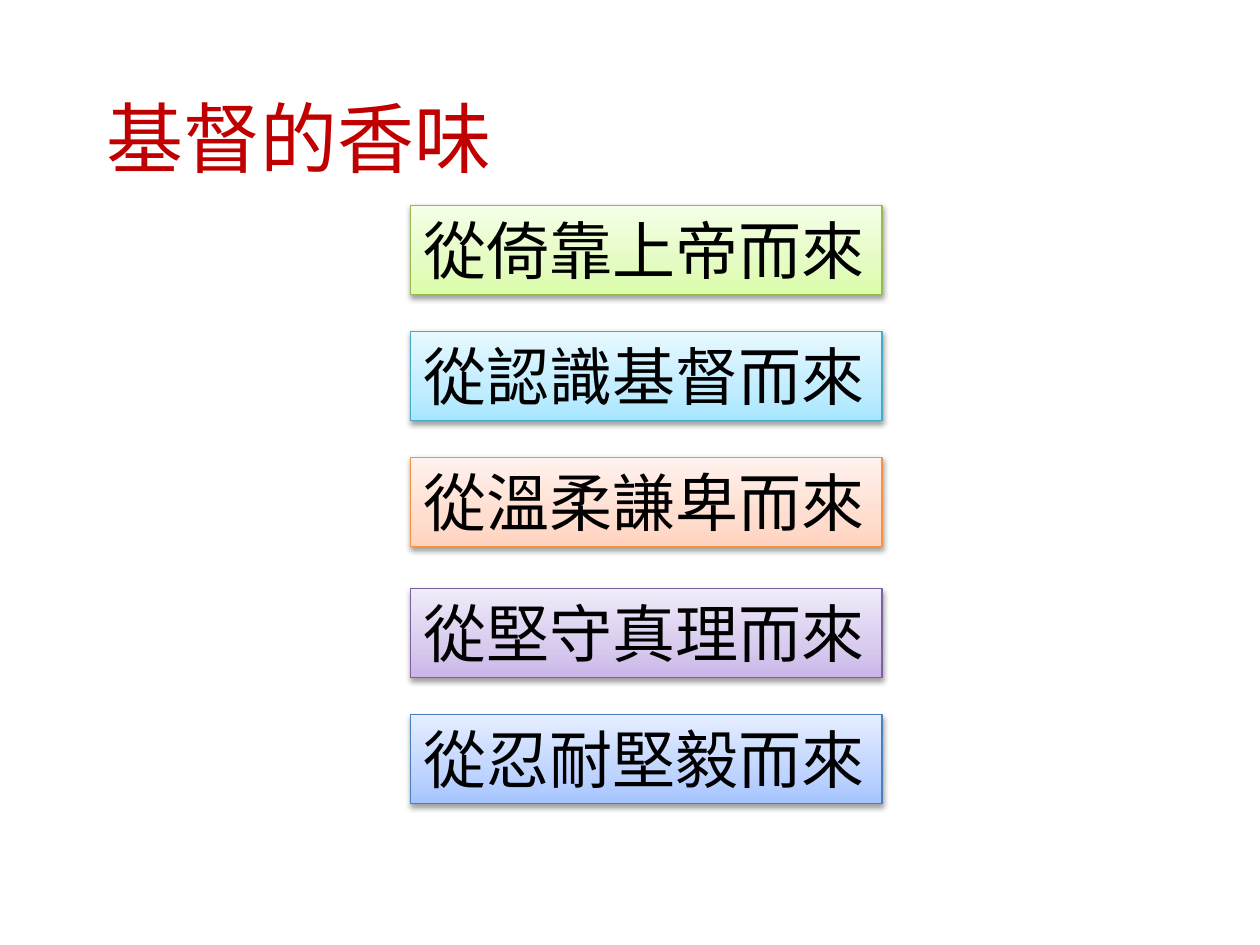
from copy import deepcopy

from lxml.etree import SubElement
from pptx import Presentation
from pptx.dml.color import RGBColor
from pptx.enum.shapes import MSO_SHAPE
from pptx.enum.text import MSO_ANCHOR, MSO_AUTO_SIZE, PP_ALIGN
from pptx.oxml.ns import qn
from pptx.util import Inches, Pt

FONT = "Noto Sans CJK SC"
TITLE = "基督的香味"
TITLE_BOX = (0.75, 0.67, 3.29, 0.84)
COLUMN_LEFT, BOX_WIDTH, BOX_HEIGHT = 3.26, 3.74, 0.71
ROW_TOPS = [1.63, 2.63, 3.63, 4.67, 5.67]
STOP_POSITIONS = (0, 0.35, 1)
SOURCES = [
    ("從倚靠上帝而來", "98B955", ("DAFDA7", "E4FCC2", "F5FFE7")),
    ("從認識基督而來", "46AAC5", ("A7E6FF", "C1EDFF", "E7F8FF")),
    ("從溫柔謙卑而來", "F69240", ("FFD2BD", "FFDED0", "FFF2ED")),
    ("從堅守真理而來", "7D60A0", ("C9B5E8", "D8CBEE", "F0EAF9")),
    ("從忍耐堅毅而來", "4B7EBC", ("A4C4FF", "BFD4FF", "E6EEFF")),
]
FRAME_FORMAT = {
    "word_wrap": False,
    "auto_size": MSO_AUTO_SIZE.SHAPE_TO_FIT_TEXT,
    "vertical_anchor": MSO_ANCHOR.TOP,
}
SHADOW_FORMAT = {
    "blurRad": "40000",
    "dist": "20000",
    "dir": "5400000",
    "rotWithShape": "0",
}


def color(hex_value):
    """Turn a hex string into a colour."""
    return RGBColor.from_string(hex_value)


def write_text(shape, text, size, hex_value):
    """Write one left-aligned line into a shape that grows with its text."""
    frame = shape.text_frame
    for name, value in FRAME_FORMAT.items():
        setattr(frame, name, value)
    paragraph = frame.paragraphs[0]
    paragraph.alignment = PP_ALIGN.LEFT
    run = paragraph.add_run()
    run.text = text
    for name, value in {"size": Pt(size), "name": FONT}.items():
        setattr(run.font, name, value)
    run.font.color.rgb = color(hex_value)
    SubElement(run._r.get_or_add_rPr(), qn("a:ea"), typeface=FONT)


def fill_gradient(shape, hex_values):
    """Fill a shape with a three-stop gradient rising from its bottom."""
    shape.fill.gradient()
    shape.fill.gradient_angle = 90
    stop_list = shape.element.spPr.find(".//" + qn("a:gsLst"))
    stop_list.append(deepcopy(stop_list[-1]))
    stops = shape.fill.gradient_stops
    for stop, position, hex_value in zip(stops, STOP_POSITIONS, hex_values):
        stop.position = position
        stop.color.rgb = color(hex_value)


def add_soft_shadow(shape):
    """Give a shape a soft black shadow below it."""
    shape.shadow.inherit = False
    effects = shape.element.spPr.find(qn("a:effectLst"))
    shadow = SubElement(effects, qn("a:outerShdw"), SHADOW_FORMAT)
    shadow_color = SubElement(shadow, qn("a:srgbClr"), val="000000")
    SubElement(shadow_color, qn("a:alpha"), val="38000")


def add_title(slide):
    """Add the red heading."""
    shape = slide.shapes.add_textbox(*map(Inches, TITLE_BOX))
    write_text(shape, TITLE, 44, "C00000")


def add_source_box(slide, top, text, line_color, gradient):
    """Add one shaded box of the column."""
    box = map(Inches, (COLUMN_LEFT, top, BOX_WIDTH, BOX_HEIGHT))
    shape = slide.shapes.add_shape(MSO_SHAPE.RECTANGLE, *box)
    fill_gradient(shape, gradient)
    shape.line.color.rgb = color(line_color)
    shape.line.width = Pt(0.75)
    add_soft_shadow(shape)
    write_text(shape, text, 36, "000000")


def main():
    """Build and save the slide."""
    presentation = Presentation()
    presentation.slide_width = Inches(10)
    presentation.slide_height = Inches(7.5)
    slide = presentation.slides.add_slide(presentation.slide_layouts[6])
    for top, source in zip(ROW_TOPS, SOURCES):
        add_source_box(slide, top, *source)
    add_title(slide)
    presentation.save("out.pptx")


if __name__ == "__main__":
    main()
